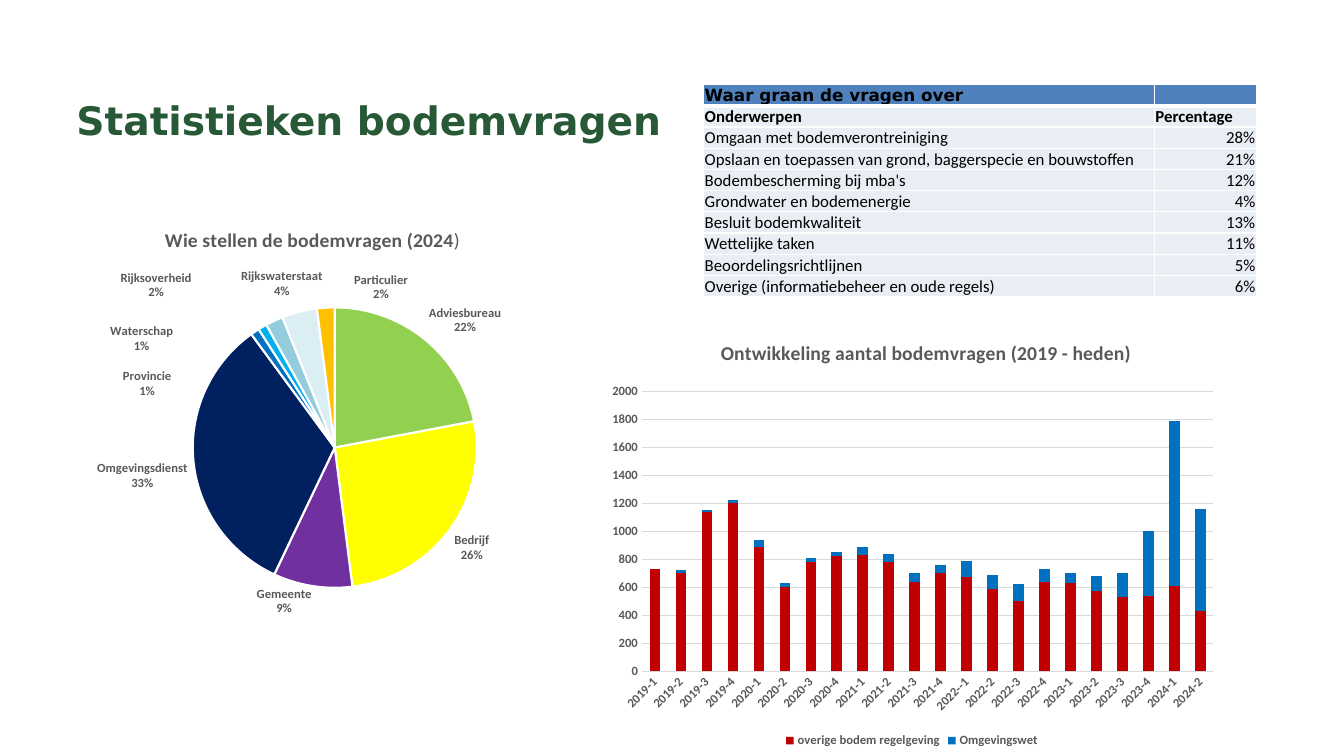
"""Build the slide with statistics on soil questions."""
from copy import deepcopy

from lxml.etree import SubElement
from pptx import Presentation
from pptx.chart.data import CategoryChartData
from pptx.dml.color import RGBColor
from pptx.enum.chart import XL_CHART_TYPE, XL_LABEL_POSITION, XL_LEGEND_POSITION, XL_TICK_MARK
from pptx.enum.text import MSO_ANCHOR, PP_ALIGN
from pptx.oxml import parse_xml
from pptx.oxml.ns import nsdecls, qn
from pptx.util import Pt

PX = 9144
GREEN = RGBColor(0x27, 0x59, 0x37)
GRAY = RGBColor(0x59, 0x59, 0x59)
GRID = RGBColor(0xD9, 0xD9, 0xD9)
BLACK = RGBColor(0, 0, 0)
WHITE = RGBColor(0xFF, 0xFF, 0xFF)
HEADER = RGBColor(0x4F, 0x81, 0xBD)
BAND = RGBColor(0xE9, 0xED, 0xF4)
RED = RGBColor(0xC0, 0, 0)
BLUE = RGBColor(0, 0x70, 0xC0)
LIME = RGBColor(0x92, 0xD0, 0x50)
YELLOW = RGBColor(0xFF, 0xFF, 0)
PURPLE = RGBColor(0x70, 0x30, 0xA0)
NAVY = RGBColor(0, 0x20, 0x60)
SKY = RGBColor(0, 0xB0, 0xF0)
TEAL = RGBColor(0x93, 0xCD, 0xDD)
PALE = RGBColor(0xDB, 0xEE, 0xF4)
AMBER = RGBColor(0xFF, 0xC0, 0)


def set_font(font, size, color, bold=True, name="Calibri"):
    for key, value in {"size": Pt(size), "bold": bold, "name": name}.items():
        setattr(font, key, value)
    font.color.rgb = color


def add_chart(kind, box, data, title_runs, title_at, plot_at):
    chart = s.shapes.add_chart(kind, *[v * PX for v in box], data).chart
    set_font(chart.font, 10, BLACK, False)
    p = chart.chart_title.text_frame.paragraphs[0]
    for text, bold in title_runs:
        r = p.add_run()
        r.text = text
        set_font(r.font, 14, GRAY, bold)
    chart.chart_title.include_in_layout = False
    title = chart.chart_title._element
    plot_area = chart.plots[0]._element.getparent()
    for parent, index, target, at in ((title, 1, "", title_at),
                                      (plot_area, 0, '<c:layoutTarget val="inner"/>', plot_at)):
        for old in parent.findall(qn("c:layout")):
            parent.remove(old)
        sizes = "".join(f'<c:{k} val="{v}"/>' for k, v in zip("xywh", at))
        parent.insert(index, parse_xml(
            f'<c:layout {nsdecls("c")}><c:manualLayout>{target}<c:xMode val="edge"/>'
            f'<c:yMode val="edge"/>{sizes}</c:manualLayout></c:layout>'))
    return chart


prs = Presentation()
prs.slide_width, prs.slide_height = 1333 * PX, 750 * PX
s = prs.slides.add_slide(prs.slide_layouts[6])

tf = s.shapes.add_textbox(66 * PX, 91 * PX, 1200 * PX, 73 * PX).text_frame
tf.word_wrap = True
r = tf.paragraphs[0].add_run()
r.text = "Statistieken bodemvragen"
set_font(r.font, 28, GREEN, name="DejaVu Sans")

askers = [
    ("Adviesbureau", 22, LIME, None),
    ("Bedrijf", 26, YELLOW, None),
    ("Gemeente", 9, PURPLE, None),
    ("Omgevingsdienst", 33, NAVY, None),
    ("Provincie", 1, BLUE, (-0.13, 0.18)),
    ("Waterschap", 1, SKY, (-0.14, 0.08)),
    ("Rijksoverheid", 2, TEAL, (-0.13, -0.04)),
    ("Rijkswaterstaat", 4, PALE, (0.04, -0.02)),
    ("Particulier", 2, AMBER, (0.09, 0)),
]
data = CategoryChartData()
data.categories = [a[0] for a in askers]
data.add_series("Series 1", [a[1] for a in askers])
pie = add_chart(XL_CHART_TYPE.PIE, (26, 218, 612, 398), data,
                [("Wie stellen de bodemvragen (2024", True), (")", False)],
                (0.22, 0.01), (0.27, 0.22, 0.46, 0.71))
pie.has_legend = False
ser = pie.plots[0].series[0]
labels = ser.data_labels
set_font(labels.font, 9, GRAY)
for key, value in {"show_percentage": True, "show_category_name": True, "show_value": False,
                   "number_format": "0%", "number_format_is_linked": False,
                   "position": XL_LABEL_POSITION.OUTSIDE_END}.items():
    setattr(labels, key, value)
dLbls = labels._element
sep = SubElement(dLbls, qn("c:separator"))
sep.text = "\n"
dLbls.find(qn("c:showBubbleSize")).addnext(sep)
for leader in dLbls.findall(qn("c:showLeaderLines")):
    leader.set("val", "0")
shared = [e for e in dLbls if e.tag != qn("c:showLeaderLines")]
moved = []
for i, (name, value, color, shift) in enumerate(askers):
    pt = ser.points[i].format
    pt.fill.solid()
    pt.fill.fore_color.rgb = color
    pt.line.color.rgb = WHITE
    pt.line.width = Pt(1.5)
    if shift:
        dLbl = parse_xml(
            f'<c:dLbl {nsdecls("c")}><c:idx val="{i}"/><c:layout><c:manualLayout>'
            f'<c:x val="{shift[0]}"/><c:y val="{shift[1]}"/></c:manualLayout></c:layout></c:dLbl>')
        dLbl.extend(deepcopy(shared))
        dLbls.insert(len(moved), dLbl)
        moved.append(dLbl)

rows = [
    ("Waar graan de vragen over", ""),
    ("Onderwerpen", "Percentage"),
    ("Omgaan met bodemverontreiniging", "28%"),
    ("Opslaan en toepassen van grond, baggerspecie en bouwstoffen", "21%"),
    ("Bodembescherming bij mba's", "12%"),
    ("Grondwater en bodemenergie", "4%"),
    ("Besluit bodemkwaliteit", "13%"),
    ("Wettelijke taken", "11%"),
    ("Beoordelingsrichtlijnen", "5%"),
    ("Overige (informatiebeheer en oude regels)", "6%"),
]
table = s.shapes.add_table(len(rows), 2, 698 * PX, 84 * PX, 548 * PX, 190 * PX).table
for col, width in zip(table.columns, (447, 101)):
    col.width = width * PX
for i, row in enumerate(rows):
    table.rows[i].height = 19 * PX
    for j, text in enumerate(row):
        cell = table.cell(i, j)
        for key, value in {"margin_left": PX, "margin_right": PX, "margin_top": PX,
                           "margin_bottom": 0, "vertical_anchor": MSO_ANCHOR.BOTTOM}.items():
            setattr(cell, key, value)
        p = cell.text_frame.paragraphs[0]
        p.alignment = PP_ALIGN.RIGHT if i > 1 and j else PP_ALIGN.LEFT
        if text:
            r = p.add_run()
            r.text = text
            set_font(r.font, 12, BLACK, i < 2, "Calibri" if i else "DejaVu Sans")
        else:
            SubElement(p._p, qn("a:endParaRPr"), sz="1200")
        tcPr = cell._tc.get_or_add_tcPr()
        for side in ("lnL", "lnR", "lnT", "lnB"):
            width = Pt(3 if (i, side) in ((0, "lnB"), (1, "lnT")) else 1)
            tcPr.append(parse_xml(f'<a:{side} {nsdecls("a")} w="{width}"><a:solidFill>'
                                  f'<a:srgbClr val="{WHITE}"/></a:solidFill></a:{side}>'))
        cell.fill.solid()
        cell.fill.fore_color.rgb = BAND if i else HEADER

data = CategoryChartData()
data.categories = [
    "2019-1", "2019-2", "2019-3", "2019-4", "2020-1", "2020-2", "2020-3", "2020-4",
    "2021-1", "2021-2", "2021-3", "2021-4", "2022--1", "2022-2", "2022-3", "2022-4",
    "2023-1", "2023-2", "2023-3", "2023-4", "2024-1", "2024-2"]
data.add_series("overige bodem regelgeving", [
    730, 700, 1140, 1200, 890, 600, 780, 820, 830, 780, 640,
    700, 670, 590, 500, 640, 630, 570, 530, 540, 610, 430])
data.add_series("Omgevingswet", [
    0, 20, 10, 20, 50, 30, 30, 30, 60, 60, 60,
    60, 120, 100, 120, 90, 70, 110, 170, 460, 1180, 730])
bars = add_chart(XL_CHART_TYPE.COLUMN_STACKED, (593, 325, 623, 421), data,
                 [("Ontwikkeling aantal bodemvragen (2019 - heden)", True)],
                 (0.19, 0.02), (0.07, 0.15, 0.91, 0.66))
plot = bars.plots[0]
plot.gap_width, plot.overlap, plot.vary_by_categories = 150, 100, False
for ser, color in zip(plot.series, (RED, BLUE)):
    ser.format.fill.solid()
    ser.format.fill.fore_color.rgb = color
for axis in (bars.category_axis, bars.value_axis):
    axis.major_tick_mark = axis.minor_tick_mark = XL_TICK_MARK.NONE
    set_font(axis.tick_labels.font, 9, GRAY)
bars.category_axis._element.find(qn("c:txPr")).find(qn("a:bodyPr")).set("rot", "-2700000")
bars.value_axis.maximum_scale, bars.value_axis.major_unit = 2000, 200
bars.value_axis.format.line.fill.background()
for line in (bars.category_axis.format.line, bars.value_axis.major_gridlines.format.line):
    line.color.rgb = GRID
    line.width = Pt(0.75)
bars.has_legend = True
bars.legend.position = XL_LEGEND_POSITION.BOTTOM
bars.legend.include_in_layout = False
set_font(bars.legend.font, 9, GRAY)

prs.save("out.pptx")
